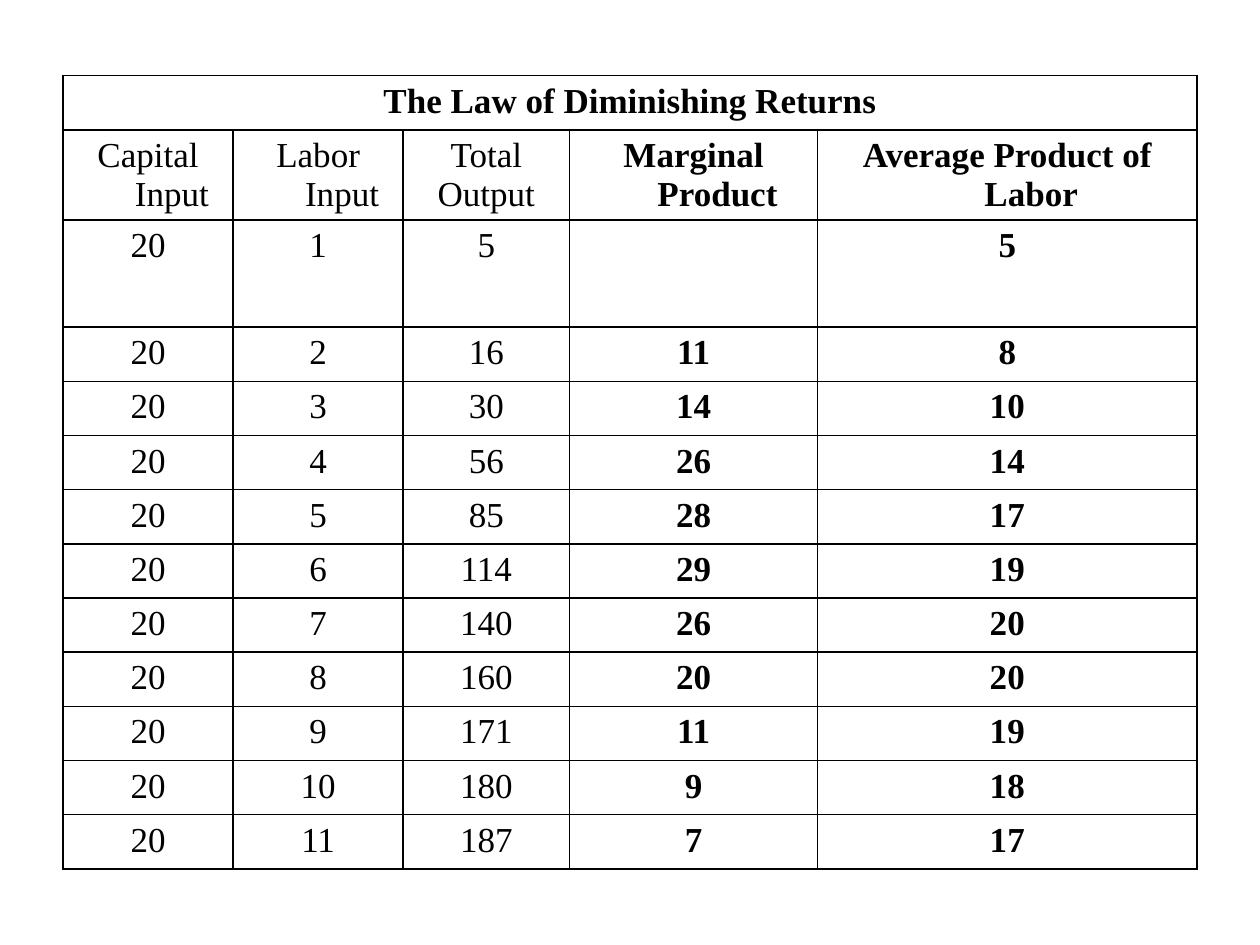
from lxml.etree import SubElement
from pptx import Presentation
from pptx.dml.color import RGBColor
from pptx.enum.text import PP_ALIGN
from pptx.oxml.ns import qn
from pptx.util import Inches, Pt

COLORS = {"ink": "000000", "paper": "FFFFFF"}
INDENT = Inches(0.38)
BOLD_FROM = 3
WIDTHS = [1.35, 1.35, 1.32, 1.97, 3.01]
HEIGHTS = [0.43, 0.71, 0.85] + [0.43] * 10

heading = "The Law of Diminishing Returns"
headers = ["Capital Input", "Labor Input", "Total\nOutput",
           "Marginal Product", "Average Product of Labor"]
outputs = [5, 16, 30, 56, 85, 114, 140, 160, 171, 180, 187]
marginals = ["", 11, 14, 26, 28, 29, 26, 20, 11, 9, 7]
averages = [5, 8, 10, 14, 17, 19, 20, 20, 19, 18, 17]
rows = [[heading, "", "", "", ""], headers]
for labor, values in enumerate(zip(outputs, marginals, averages), start=1):
    rows.append([20, labor, *values])


def add_borders(cell):
    properties = cell._tc.get_or_add_tcPr()
    for position, side in enumerate(["lnL", "lnR", "lnT", "lnB"]):
        line = SubElement(properties, qn(f"a:{side}"), w=str(Pt(1)))
        solid = SubElement(line, qn("a:solidFill"))
        SubElement(solid, qn("a:srgbClr"), val=COLORS["ink"])
        properties.insert(position, line)


prs = Presentation()
prs.slide_width, prs.slide_height = Inches(10), Inches(7.5)
slide = prs.slides.add_slide(prs.slide_layouts[6])

returns = slide.shapes.add_table(
    len(rows), len(WIDTHS), Inches(0.5), Inches(0.6),
    Inches(sum(WIDTHS)), Inches(sum(HEIGHTS))).table
returns.first_row = False
returns.horz_banding = False
for column, width in zip(returns.columns, WIDTHS):
    column.width = Inches(width)
for row, height in zip(returns.rows, HEIGHTS):
    row.height = Inches(height)

for r, values in enumerate(rows):
    for c, value in enumerate(values):
        cell = returns.cell(r, c)
        cell.text = str(value)
        cell.fill.solid()
        cell.fill.fore_color.rgb = RGBColor.from_string(COLORS["paper"])
        add_borders(cell)
        for paragraph in cell.text_frame.paragraphs:
            paragraph.alignment = PP_ALIGN.CENTER
            layout = paragraph._p.get_or_add_pPr()
            layout.set("marL", str(INDENT))
            layout.set("indent", str(-INDENT))
            paragraph.font.name = "Times New Roman"
            paragraph.font.size = Pt(20)
            paragraph.font.bold = r == 0 or c >= BOLD_FROM
            paragraph.font.color.rgb = RGBColor.from_string(COLORS["ink"])

returns.cell(0, 0).merge(returns.cell(0, len(WIDTHS) - 1))

prs.save("out.pptx")
